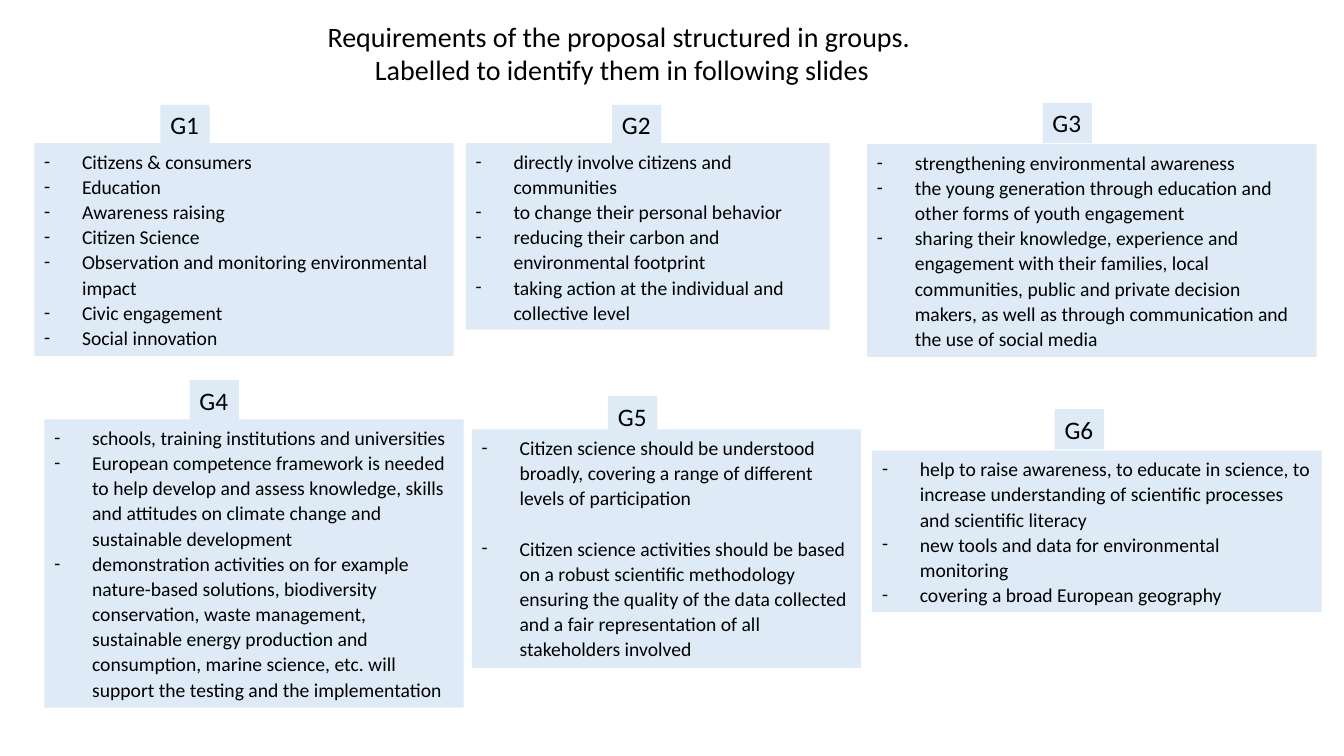
from lxml import etree
from pptx import Presentation
from pptx.dml.color import RGBColor
from pptx.enum.text import MSO_AUTO_SIZE, PP_ALIGN
from pptx.oxml.ns import qn
from pptx.util import Inches, Pt

BLACK = RGBColor(0x00, 0x00, 0x00)
PALE_BLUE = RGBColor(0xDE, 0xEB, 0xF7)
GROW = MSO_AUTO_SIZE.SHAPE_TO_FIT_TEXT
CENTER = PP_ALIGN.CENTER

TITLE = [
    "Requirements of the proposal structured in groups. ",
    "Labelled to identify them in following slides",
]

GROUPS = [
    ("G1", (1.59, 1.04), (0.34, 1.42, 4.16, 2.11), 0, [
        "Citizens & consumers",
        "Education",
        "Awareness raising",
        "Citizen Science",
        "Observation and monitoring environmental impact",
        "Civic engagement",
        "Social innovation",
    ]),
    ("G2", (6.07, 1.04), (4.62, 1.42, 3.61, 1.85), 0, [
        "directly involve citizens and communities",
        "to change their personal behavior",
        "reducing their carbon and environmental footprint",
        "taking action at the individual and collective level",
    ]),
    ("G3", (10.34, 1.02), (8.6, 1.43, 4.46, 2.11), 0, [
        "strengthening environmental awareness",
        "the young generation through education and other forms of "
        "youth engagement",
        "sharing their knowledge, experience and engagement with their "
        "families, local communities, public and private decision makers, "
        "as well as through communication and the use of social media",
    ]),
    ("G4", (1.88, 3.77), (0.44, 4.16, 4.16, 2.86), 0, [
        "schools, training institutions and universities",
        "European competence framework is needed to help develop and assess "
        "knowledge, skills and attitudes on climate change and sustainable "
        "development",
        "demonstration activities on for example nature-based solutions, "
        "biodiversity conservation, waste management, sustainable energy "
        "production and consumption, marine science, etc. will support the "
        "testing and the implementation",
    ]),
    ("G5", (6.03, 3.93), (4.68, 4.26, 3.86, 2.37), 18, [
        "Citizen science should be understood broadly, covering a range of "
        "different levels of participation",
        "Citizen science activities should be based on a robust scientific "
        "methodology ensuring the quality of the data collected and a fair "
        "representation of all stakeholders involved",
    ]),
    ("G6", (10.46, 4.06), (8.65, 4.47, 4.46, 1.6), 0, [
        "help to raise awareness, to educate in science, to increase "
        "understanding of scientific processes and scientific literacy",
        "new tools and data for environmental monitoring",
        "covering a broad European geography",
    ]),
]


class SlideBuilder:
    font = "Calibri"
    title_size = Pt(20)
    label_size = Pt(18)
    body_size = Pt(14)
    line_spacing = 1.07
    indent = Inches(0.375)
    label_box = (0.49, 0.4)

    def __init__(self, slide):
        self.slide = slide

    def text_box(self, box, lines, size, wrap=False, fill=None):
        sp = self.slide.shapes.add_textbox(*(Inches(v) for v in box))
        if fill is not None:
            sp.fill.solid()
            sp.fill.fore_color.rgb = fill
        tf = sp.text_frame
        tf.word_wrap = wrap
        tf.auto_size = GROW
        tf.text = "\n".join(lines)
        for p in tf.paragraphs:
            for r in p.runs:
                r.font.name = self.font
                r.font.size = size
                r.font.color.rgb = BLACK
        return tf

    def title(self, box, lines):
        for p in self.text_box(box, lines, self.title_size).paragraphs:
            p.alignment = CENTER

    def label(self, position, text):
        self.text_box(position + self.label_box, [text], self.label_size,
                      fill=PALE_BLUE)

    def dash_list(self, box, items, gap):
        tf = self.text_box(box, items, self.body_size, wrap=True, fill=PALE_BLUE)
        for i, p in enumerate(tf.paragraphs):
            p.line_spacing = self.line_spacing
            p.space_before = Pt(gap if i else 0)
            pPr = p._p.get_or_add_pPr()
            pPr.set("marL", str(self.indent))
            pPr.set("indent", str(-self.indent))
            etree.SubElement(pPr, qn("a:buFont")).set("typeface", self.font)
            etree.SubElement(pPr, qn("a:buChar")).set("char", "-")


def main():
    prs = Presentation()
    prs.slide_width = Inches(13.33)
    prs.slide_height = Inches(7.5)
    s = SlideBuilder(prs.slides.add_slide(prs.slide_layouts[6]))
    s.title((3.12, 0.14, 6.1, 0.77), TITLE)
    for name, label_position, box, gap, items in GROUPS:
        s.dash_list(box, items, gap)
        s.label(label_position, name)
    prs.save("out.pptx")


if __name__ == "__main__":
    main()
